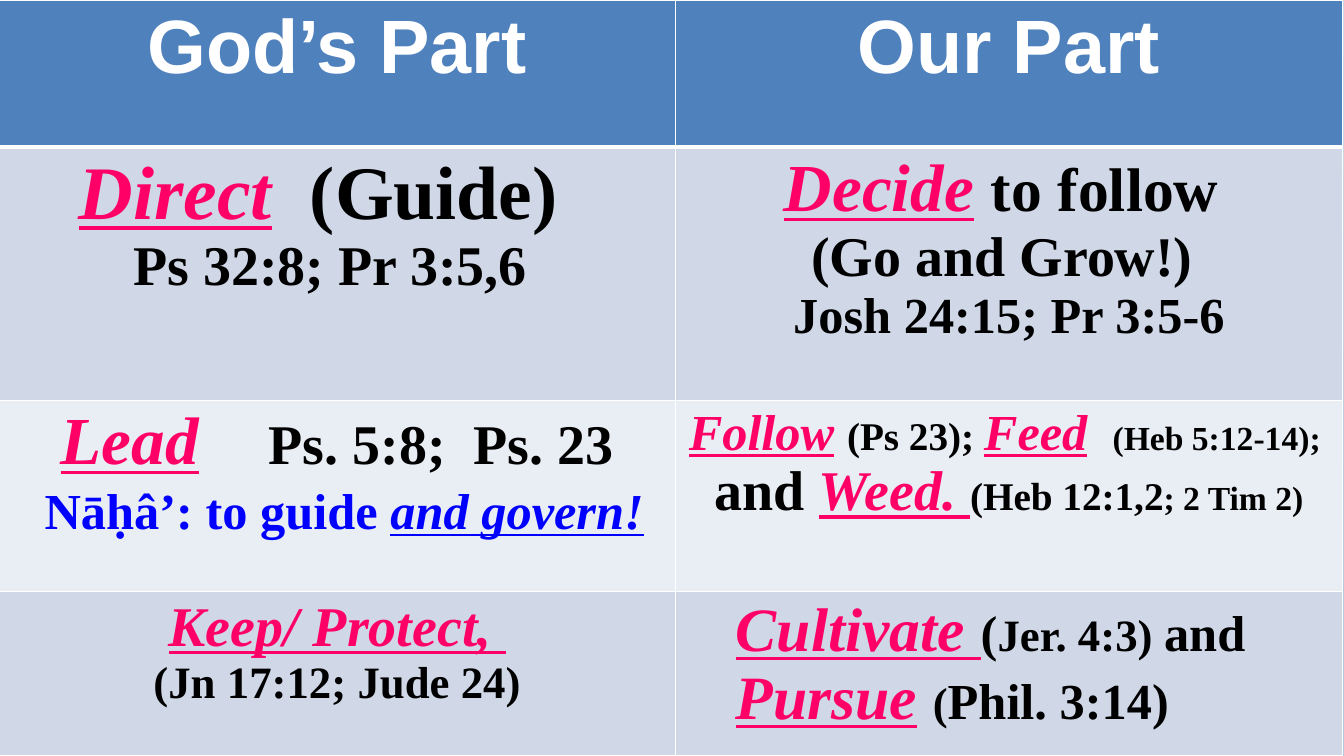
from dataclasses import dataclass

from lxml import etree
from pptx import Presentation
from pptx import util as u
from pptx.dml.color import RGBColor
from pptx.enum import text
from pptx.oxml import ns

WHITE = RGBColor(0xFF, 0xFF, 0xFF)
BLACK = RGBColor(0x00, 0x00, 0x00)
PINK = RGBColor(0xFF, 0x00, 0x66)
BLUE = RGBColor(0x00, 0x00, 0xFF)
HEADER = RGBColor(0x4F, 0x81, 0xBD)
BAND_DARK = RGBColor(0xD0, 0xD8, 0xE8)
BAND_LIGHT = RGBColor(0xE9, 0xED, 0xF4)
BG_TOP = RGBColor(0xCA, 0xD9, 0xEB)
BG_BOTTOM = RGBColor(0xB0, 0xC6, 0xE1)

COL_WIDTHS = (483.12, 476.64)
ROW_HEIGHTS = (105.12, 180.72, 136.8, 117.36)
ROW_FILLS = (HEADER, BAND_DARK, BAND_LIGHT, BAND_DARK)


@dataclass
class Span:
    text: str
    size: float
    color: RGBColor = BLACK
    key: bool = False  # italic and underlined
    font: str = "Times New Roman"
    spacing: float = 0  # extra points after each character


@dataclass
class Cell:
    lines: list[list[Span]]
    indent: float = 0  # an indented cell is left-aligned


def key(words: str, size: float, color: RGBColor = PINK) -> Span:
    return Span(words, size, color, key=True)


def heading(words: str) -> Cell:
    return Cell([[Span(words, 54, WHITE, font="Arial")]])


ROWS = [
    [heading("God’s Part"), heading("Our Part")],
    [
        Cell([[key("Direct", 54), Span("  (Guide)  ", 54)],
              [Span("Ps 32:8; Pr 3:5,6 ", 40)]]),
        Cell([[key("Decide", 48), Span(" ", 48), Span("to follow ", 44)],
              [Span("(Go and Grow!) ", 40)],
              [Span("Josh 24:15; Pr 3:5-6", 36)]]),
    ],
    [
        Cell([[key("Lead", 48), Span(" ", 40, spacing=40),
               Span("Ps. 5:8;  Ps. 23", 40)],
              [Span(" ", 40), Span("Nāḥâ’: to guide ", 36, BLUE),
               key("and govern!", 36, BLUE)]]),
        Cell([[key("Follow", 36), Span(" ", 36), Span("(Ps 23); ", 28),
               key("Feed", 36), Span("  ", 36), Span("(Heb 5:12-14); ", 24)],
              [Span("and ", 40), key("Weed. ", 40),
               Span("(Heb 12:1,2", 28), Span("; 2 Tim 2)", 24)]]),
    ],
    [
        Cell([[key("Keep/ Protect, ", 40)],
              [Span("(Jn 17:12; Jude 24)", 32)]]),
        Cell([[key("Cultivate ", 44), Span("(", 36), Span("Jer. 4:3) ", 32),
               Span("and ", 36), key("Pursue", 44), Span(" ", 44),
               Span("(", 32), Span("Phil. 3:14)", 36)]], indent=36),
    ],
]


def add_span(p, span: Span) -> None:
    r = p.add_run()
    r.text = span.text
    formats = {"name": span.font, "size": u.Pt(span.size), "bold": True,
               "italic": span.key, "underline": span.key}
    for name, value in formats.items():
        setattr(r.font, name, value)
    r.font.color.rgb = span.color
    if span.spacing:
        r._r.get_or_add_rPr().set("spc", str(round(span.spacing * 100)))


def set_borders(cell, widths: dict[str, float]) -> None:
    tcPr = cell._tc.get_or_add_tcPr()
    for i, (side, width) in enumerate(widths.items()):
        ln = etree.Element(ns.qn(f"a:{side}"), w=str(u.Pt(width)))
        fill = etree.SubElement(ln, ns.qn("a:solidFill"))
        etree.SubElement(fill, ns.qn("a:srgbClr"), val=str(WHITE))
        tcPr.insert(i, ln)


def fill_cell(cell, content: Cell, color: RGBColor) -> None:
    cell.fill.solid()
    cell.fill.fore_color.rgb = color
    tf = cell.text_frame
    for i, line in enumerate(content.lines):
        p = tf.paragraphs[0] if i == 0 else tf.add_paragraph()
        if content.indent:
            p.alignment = text.PP_ALIGN.LEFT
            pPr = p._p.get_or_add_pPr()
            pPr.set("marL", str(u.Pt(content.indent)))
            pPr.set("indent", "0")
        else:
            p.alignment = text.PP_ALIGN.CENTER
        for span in line:
            add_span(p, span)


def main() -> None:
    prs = Presentation()
    prs.slide_width, prs.slide_height = u.Pt(960), u.Pt(540)
    s = prs.slides.add_slide(prs.slide_layouts[6])

    # Background
    bg = s.background.fill
    bg.gradient()
    bg.gradient_angle = 270
    for stop, color in zip(bg.gradient_stops, (BG_TOP, BG_BOTTOM)):
        stop.color.rgb = color

    # Table grid
    tbl = s.shapes.add_table(len(ROWS), len(COL_WIDTHS), u.Pt(-0.72), u.Pt(0),
                             u.Pt(sum(COL_WIDTHS)), u.Pt(sum(ROW_HEIGHTS))).table
    for col, width in zip(tbl.columns, COL_WIDTHS):
        col.width = u.Pt(width)
    for row, height in zip(tbl.rows, ROW_HEIGHTS):
        row.height = u.Pt(height)

    # Cells, with a heavier rule under the header
    for i, (row, color) in enumerate(zip(ROWS, ROW_FILLS)):
        for j, content in enumerate(row):
            cell = tbl.cell(i, j)
            fill_cell(cell, content, color)
            set_borders(cell, {"lnL": 1, "lnR": 1, "lnT": 3 if i == 1 else 1,
                               "lnB": 3 if i == 0 else 1})

    prs.save("out.pptx")


if __name__ == "__main__":
    main()
